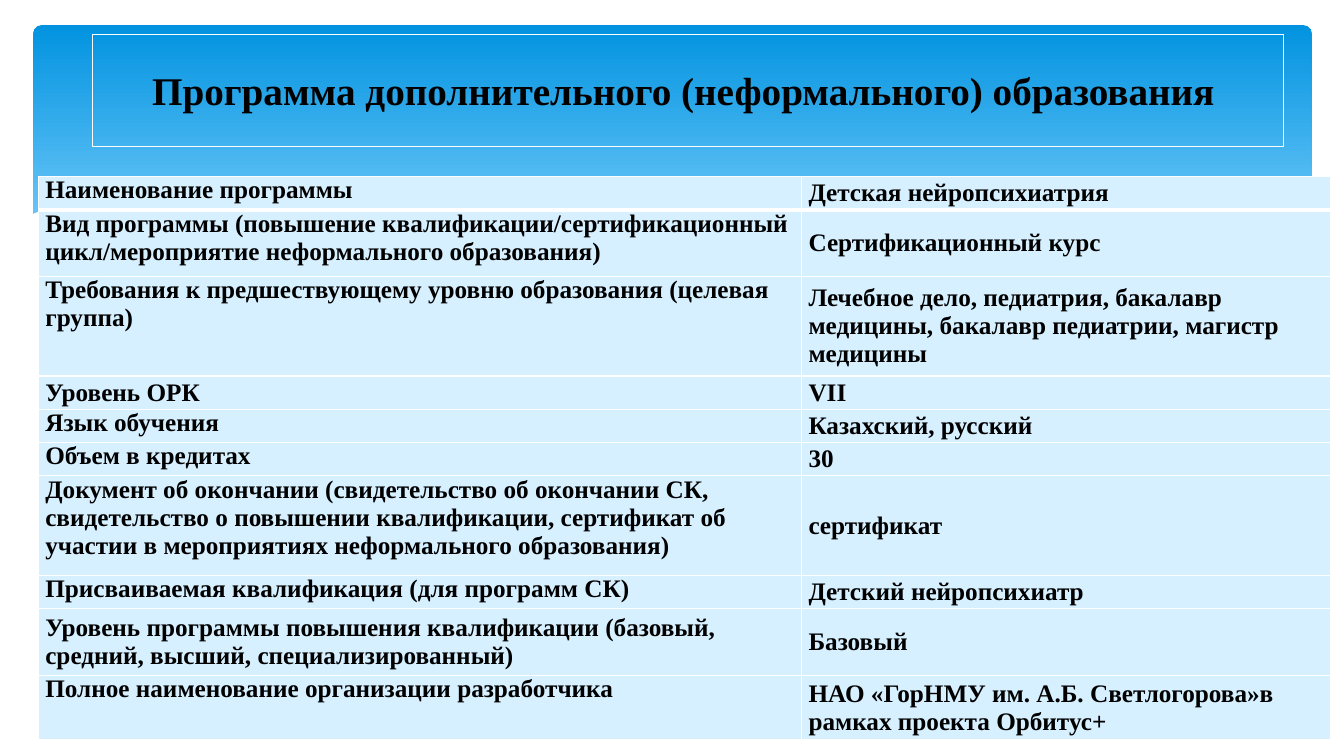
from dataclasses import dataclass

from lxml import etree
from pptx import Presentation
from pptx.dml.color import RGBColor
from pptx.enum.shapes import MSO_SHAPE
from pptx.enum.text import MSO_ANCHOR, PP_ALIGN
from pptx.oxml.ns import qn
from pptx.util import Pt

ROUNDED = MSO_SHAPE.ROUNDED_RECTANGLE
TOP, MIDDLE = MSO_ANCHOR.TOP, MSO_ANCHOR.MIDDLE
LEFT, CENTER, JUSTIFY = PP_ALIGN.LEFT, PP_ALIGN.CENTER, PP_ALIGN.JUSTIFY
EMU_PER_PX = 9144  # 100 px to the inch


@dataclass(frozen=True)
class Theme:
    font: str = "Times New Roman"
    title_size: int = 28
    cell_size: int = 18
    text: str = "000000"
    white: str = "FFFFFF"
    cell: str = "D6F0FF"
    banner_top: str = "0293E0"
    banner_bottom: str = "83D3FE"
    thin: int = 1
    thick: int = 3


THEME = Theme()
TITLE = "Программа дополнительного (неформального) образования "
COLUMNS = (757, 525)
# Row height, label, value, label anchor, label alignment
ROWS = (
    (33, "Наименование программы", "Детская нейропсихиатрия", TOP, LEFT),
    (66, "Вид программы (повышение квалификации/сертификационный "
         "цикл/мероприятие неформального образования)",
     "Сертификационный курс", TOP, LEFT),
    (99, "Требования к предшествующему уровню образования (целевая группа)",
     "Лечебное дело, педиатрия, бакалавр медицины, бакалавр педиатрии, "
     "магистр медицины", TOP, LEFT),
    (33, "Уровень ОРК", "VII", MIDDLE, JUSTIFY),
    (33, "Язык обучения", "Казахский, русский", TOP, LEFT),
    (33, "Объем в кредитах", "30", TOP, LEFT),
    (99, "Документ об окончании (свидетельство об окончании СК, "
         "свидетельство о повышении квалификации, сертификат об участии "
         "в мероприятиях неформального образования)",
     "сертификат", TOP, LEFT),
    (33, "Присваиваемая квалификация (для программ СК)",
     "Детский нейропсихиатр", TOP, LEFT),
    (66, "Уровень программы повышения квалификации (базовый, средний, "
         "высший, специализированный)", "Базовый", MIDDLE, LEFT),
    (64, "Полное наименование организации разработчика",
     "НАО «ГорНМУ им. А.Б. Светлогорова»в рамках проекта Орбитус+",
     TOP, LEFT),
)
# Upper edge of the white wave, from right to left
WAVE = (
    (1302, 246), (1254, 259), (1198, 269), (1134, 275), (1058, 276),
    (969, 272), (863, 262), (740, 245), (596, 220), (486, 202), (390, 190),
    (306, 185), (235, 184), (176, 186), (127, 191), (89, 197), (61, 203),
    (38, 210), (31, 213),
)


def px(length):
    return length * EMU_PER_PX


def color(code):
    return RGBColor.from_string(code)


def add_banner(page, left, top, width, height):
    banner = page.shapes.add_shape(
        ROUNDED, px(left), px(top), px(width), px(height))
    banner.adjustments[0] = 0.03
    banner.shadow.inherit = False
    banner.line.fill.background()
    banner.fill.gradient()
    banner.fill.gradient_angle = 270
    first, last = banner.fill.gradient_stops
    first.position, last.position = 0, 0.9
    first.color.rgb = color(THEME.banner_top)
    last.color.rgb = color(THEME.banner_bottom)


def add_wave(page, edge, bottom):
    corners = ((edge[-1][0], bottom), (edge[0][0], bottom))
    builder = page.shapes.build_freeform(*edge[0], scale=EMU_PER_PX)
    builder.add_line_segments(edge[1:] + corners, close=True)
    wave = builder.convert_to_shape()
    wave.shadow.inherit = False
    wave.fill.solid()
    wave.fill.fore_color.rgb = color(THEME.white)
    wave.line.fill.background()


def write(frame, text, size, align):
    frame.word_wrap = True
    para = frame.paragraphs[0]
    para.alignment = align
    span = para.add_run()
    span.text = text
    span.font.name = THEME.font
    span.font.size = Pt(size)
    span.font.bold = True
    span.font.color.rgb = color(THEME.text)


def add_title(page, left, top, width, height):
    box = page.shapes.add_textbox(px(left), px(top), px(width), px(height))
    box.line.color.rgb = color(THEME.white)
    box.line.width = Pt(0.75)
    box.text_frame.vertical_anchor = MIDDLE
    write(box.text_frame, TITLE, THEME.title_size, CENTER)


def add_border(cell, side, points):
    properties = cell._tc.get_or_add_tcPr()
    line = etree.SubElement(properties, qn(f"a:ln{side}"), w=str(Pt(points)))
    fill = etree.SubElement(line, qn("a:solidFill"))
    etree.SubElement(fill, qn("a:srgbClr"), val=THEME.white)


def fill_cell(cell, text, anchor, align, top_border, bottom_border):
    borders = {"L": THEME.thin, "R": THEME.thin,
               "T": top_border, "B": bottom_border}
    for side, points in borders.items():
        add_border(cell, side, points)
    cell.fill.solid()
    cell.fill.fore_color.rgb = color(THEME.cell)
    cell.margin_left = cell.margin_right = px(7)
    cell.margin_top = cell.margin_bottom = 0
    cell.vertical_anchor = anchor
    write(cell.text_frame, text, THEME.cell_size, align)


def add_program_table(page, left, top):
    height = sum(row[0] for row in ROWS)
    table = page.shapes.add_table(
        len(ROWS), len(COLUMNS), px(left), px(top),
        px(sum(COLUMNS)), px(height)).table
    for column, width in zip(table.columns, COLUMNS):
        column.width = px(width)
    for index, (height, label, value, anchor, align) in enumerate(ROWS):
        table.rows[index].height = px(height)
        # A thick rule separates the first row from the rest
        borders = (THEME.thick if index == 1 else THEME.thin,
                   THEME.thick if index == 0 else THEME.thin)
        fill_cell(table.cell(index, 0), label, anchor, align, *borders)
        fill_cell(table.cell(index, 1), value, MIDDLE, LEFT, *borders)


def main():
    deck = Presentation()
    deck.slide_width, deck.slide_height = px(1333), px(750)
    page = deck.slides.add_slide(deck.slide_layouts[6])

    # Backdrop
    add_banner(page, 33, 25, 1268, 270)
    add_wave(page, WAVE, 329)

    # Content
    add_title(page, 92, 34, 1181, 111)
    add_program_table(page, 38, 175)

    deck.save("out.pptx")


if __name__ == "__main__":
    main()
